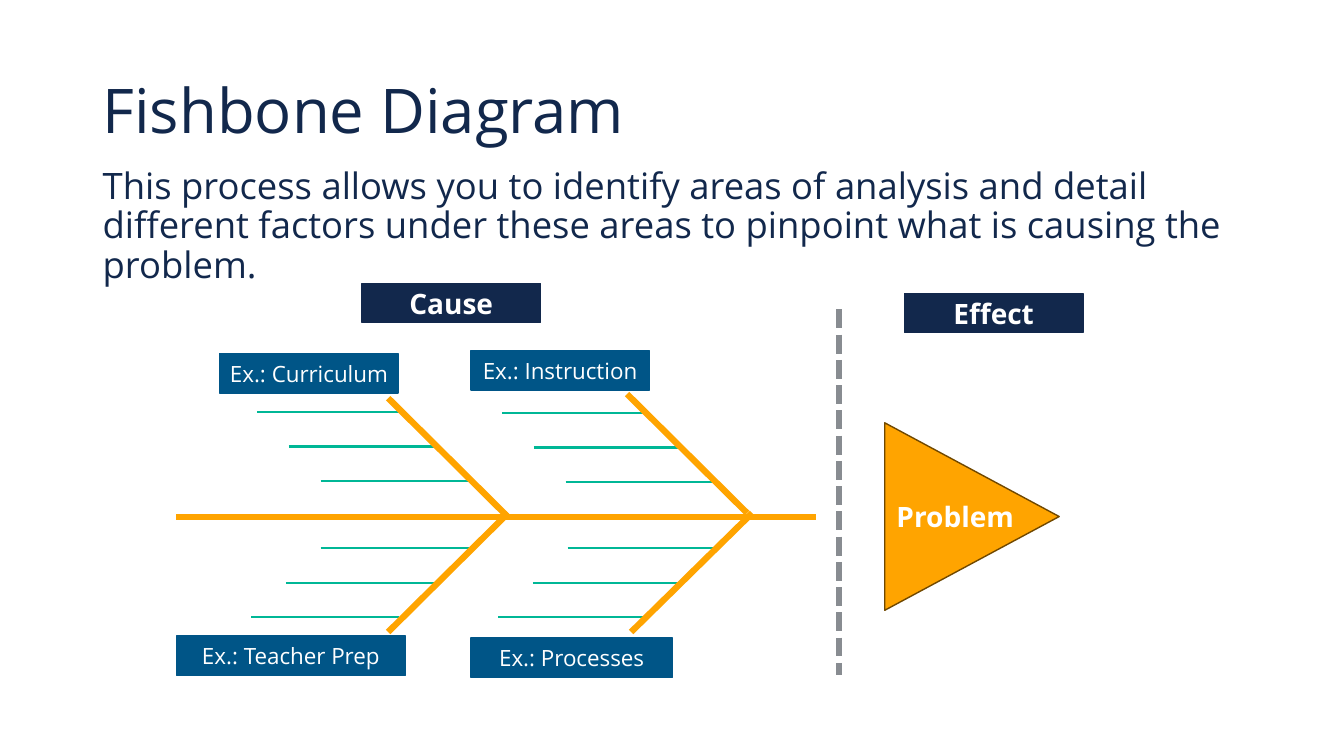
"""Build a fishbone diagram slide on a grid of tenths of an inch."""
from lxml import etree
from pptx import Presentation
from pptx import util as u
from pptx.dml.color import RGBColor
from pptx.enum import dml, shapes, text
from pptx.oxml.ns import qn

CELL = u.Inches(0.1)
HUES = {"navy": "12284C", "blue": "005587", "gold": "FFA400", "edge": "704800",
        "teal": "00B796", "gray": "888C91", "white": "FFFFFF"}
RIBS, RISE = 3, 3.4
RIB = 14.7
TAG, ROW = 17.7, 3.9

TAGS = [
    ("Cause", 35.9, 28.1, TAG, "navy", 20, True),
    ("Effect", 89.7, 29.1, TAG, "navy", 20, True),
    ("Ex.: Curriculum", 21.8, 35.1, TAG, "blue", 16, False),
    ("Ex.: Instruction", 46.7, 34.8, TAG, "blue", 16, False),
    ("Ex.: Teacher Prep", 17.5, 63.1, 22.7, "blue", 16, False),
    ("Ex.: Processes", 46.7, 63.3, 20, "blue", 16, False),
]
BONES = [
    ((38.5, 39.5), (50.4, 51.3), (25.5, 40.9), 3.15, RISE),
    ((62.2, 39.1), (74.1, 50.9), (49.8, 41), 3.15, RISE),
    ((38.5, 62.7), (50.4, 50.9), (24.9, 61.2), 3.45, -RISE),
    ((62.6, 62.7), (74.6, 50.9), (49.4, 61.2), 3.45, -RISE),
]


def grid(*cells):
    """Turn grid cells into slide lengths."""
    return [round(n * CELL) for n in cells]


def hue(name):
    """Look up a colour."""
    return RGBColor.from_string(HUES[name])


def write(shape, words, size, ink="white", bold=False, mid=True, pad=0.05):
    """Put one styled paragraph into a shape."""
    frame = shape.text_frame
    frame.text = words
    frame.word_wrap = True
    frame.margin_left = frame.margin_right = u.Inches(pad)
    frame.vertical_anchor = text.MSO_ANCHOR.MIDDLE if mid else text.MSO_ANCHOR.TOP
    para = frame.paragraphs[0]
    para.alignment = text.PP_ALIGN.CENTER
    font = para.runs[0].font
    font.name, font.size, font.bold = "Open Sans", u.Pt(size), bold
    font.color.rgb = hue(ink)
    return para


def prose(slide, words, box, size, mid):
    """Add left-aligned navy text with tight lines."""
    label = slide.shapes.add_textbox(*grid(*box))
    para = write(label, words, size, "navy", mid=mid, pad=0.1)
    para.alignment = text.PP_ALIGN.LEFT
    para.line_spacing = 0.9


def block(slide, kind, box, fill, edge):
    """Add a filled shape with a thin outline."""
    shape = slide.shapes.add_shape(kind, *grid(*box))
    shape.shadow.inherit = False
    shape.fill.solid()
    shape.fill.fore_color.rgb = hue(fill)
    shape.line.color.rgb = hue(edge)
    shape.line.width = u.Pt(1)
    return shape


def line(slide, start, end, ink, width):
    """Add a straight line between two grid points."""
    link = slide.shapes.add_connector(shapes.MSO_CONNECTOR.STRAIGHT,
                                      *grid(*start, *end))
    link.line.color.rgb = hue(ink)
    link.line.width = u.Pt(width)
    etree.SubElement(link._element.spPr, qn("a:effectLst"))
    return link


def bone(slide, tip, joint, first, shift, rise):
    """Add a slanted bone and its level ribs."""
    left, top = first
    for step in range(RIBS):
        x, y = left + step * shift, top + step * rise
        line(slide, (x, y), (x + RIB, y), "teal", 1.5)
    line(slide, tip, joint, "gold", 4.5)


def tag(slide, words, left, top, width, fill, size, bold):
    """Add a labelled rectangle."""
    shape = block(slide, shapes.MSO_SHAPE.RECTANGLE,
                  (left, top, width, ROW), fill, fill)
    write(shape, words, size, bold=bold)


def main():
    """Build and save the slide."""
    deck = Presentation()
    deck.slide_width, deck.slide_height = u.Inches(13.33), u.Inches(7.5)
    slide = deck.slides.add_slide(deck.slide_layouts[6])
    prose(slide, "Fishbone Diagram", (9.2, 4, 115, 14.5), 44, True)
    prose(slide, "This process allows you to identify areas of analysis and "
          "detail different factors under these areas to pinpoint what is "
          "causing the problem.", (9.2, 16.2, 115, 49.6), 26, False)
    line(slide, (17.5, 51.3), (80.9, 51.3), "gold", 4.5)
    head = block(slide, shapes.MSO_SHAPE.ISOSCELES_TRIANGLE,
                 (87.1, 42.6, 18.6, 17.3), "gold", "edge")
    head.rotation = 90
    for item in BONES:
        bone(slide, *item)
    for item in TAGS:
        tag(slide, *item)
    split = line(slide, (83.2, 30.7), (83.2, 67), "gray", 4.5)
    split.line.dash_style = dml.MSO_LINE.SQUARE_DOT
    label = slide.shapes.add_textbox(*grid(85.9, 49.3, TAG, ROW))
    write(label, "Problem", 20, bold=True)
    deck.save("out.pptx")


if __name__ == "__main__":
    main()
